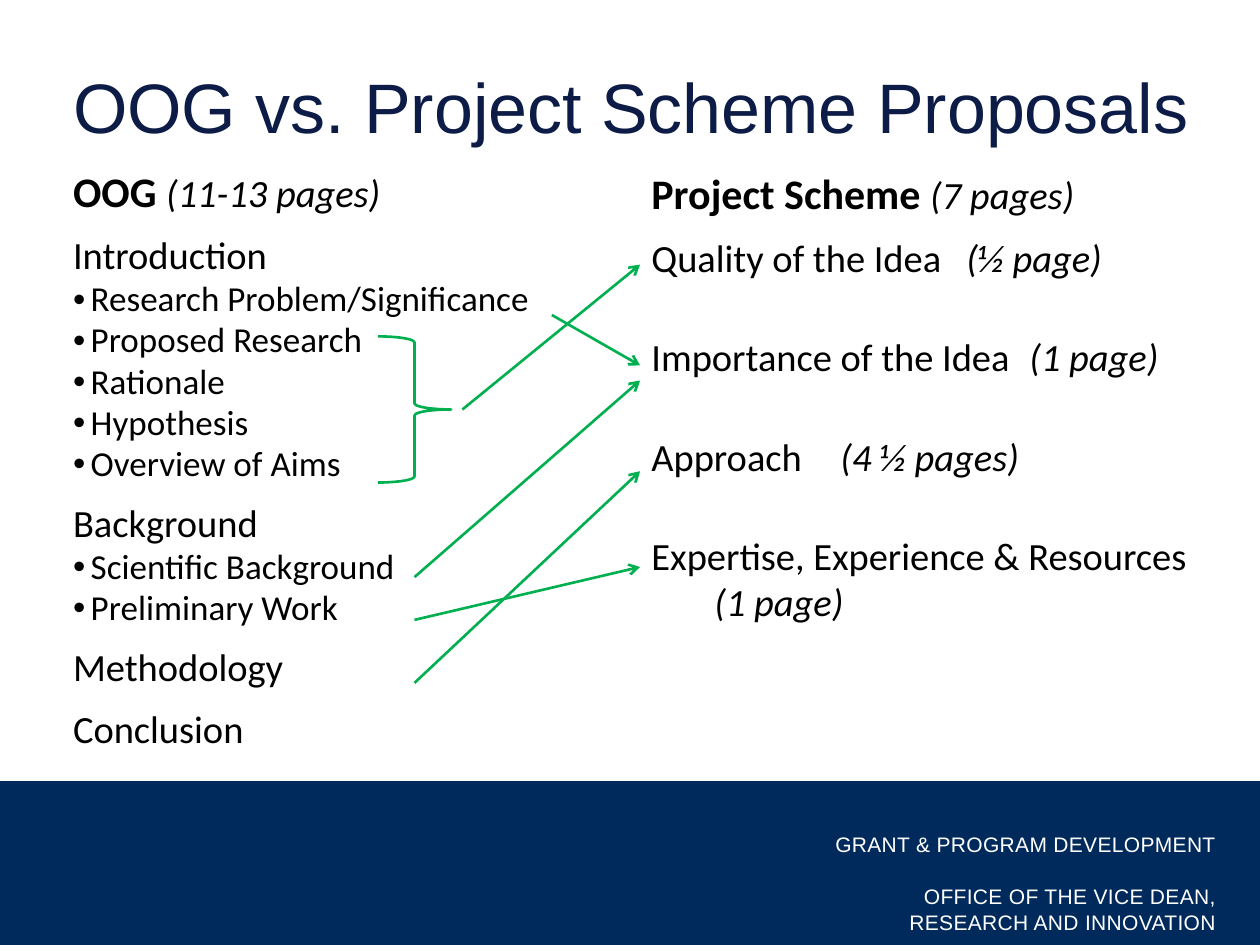
"""Build the slide that maps OOG sections to Project Scheme sections."""
from dataclasses import dataclass

import pptx
import pptx.dml.color
import pptx.enum.shapes
import pptx.enum.text
import pptx.oxml
import pptx.oxml.ns
import pptx.util
from pptx.util import Inches, Pt

COLORS = {"navy": "002A5C", "title": "0C1C47", "text": "000000",
          "white": "FFFFFF", "green": "00B050"}
FORMATS = {
    "title": {"name": "Arial", "size": Pt(40)},
    "heading": {"name": "Calibri", "size": Pt(24), "bold": True},
    "section": {"name": "Calibri", "size": Pt(22)},
    "pages": {"name": "Calibri", "size": Pt(22), "italic": True},
    "item": {"name": "Calibri", "size": Pt(20)},
    "footer": {"name": "Arial", "size": Pt(12)},
}
FRAME = {"margin_left": 0, "margin_right": 0, "margin_top": 0, "margin_bottom": 0,
         "word_wrap": True, "auto_size": pptx.enum.text.MSO_AUTO_SIZE.NONE}
ITEM_INDENT = Inches(0.14)
PAGES_TAB = Inches(3.05)
SMALL_GAP, WIDE_GAP = 9.5, 31


@dataclass
class Line:
    """A line of a column: styled pieces, gap above in points, bullet or not."""
    pieces: list[tuple[str, str]]
    gap: float = 0
    bullet: bool = False


@dataclass
class Link:
    """An arrow from an OOG part to a Project Scheme part, in inches."""
    start: tuple[float, float]
    end: tuple[float, float]


def section(name: str) -> Line:
    """Return a section line of the OOG column."""
    return Line([(name, "section")], SMALL_GAP)


def items(*names: str) -> list[Line]:
    """Return bulleted lines."""
    return [Line([(name, "item")], bullet=True) for name in names]


def criterion(name: str, pages: str, gap: float = WIDE_GAP) -> Line:
    """Return a Project Scheme line with its page count at the tab stop."""
    return Line([(f"{name}\t", "section"), (pages, "pages")], gap)


OOG = [
    Line([("OOG ", "heading"), ("(11-13 pages)", "pages")]),
    section("Introduction"),
    *items("Research Problem/Significance", "Proposed Research", "Rationale",
           "Hypothesis", "Overview of Aims"),
    section("Background"),
    *items("Scientific Background", "Preliminary Work"),
    section("Methodology"),
    section("Conclusion"),
]
PROJECT_SCHEME = [
    Line([("Project Scheme ", "heading"), ("(7 pages)", "pages")]),
    criterion("Quality of the Idea", "(½ page)", SMALL_GAP),
    criterion("Importance of the Idea", "(1 page)"),
    criterion("Approach", "(4 ½ pages)"),
    Line([("Expertise, Experience & Resources", "section")], WIDE_GAP),
    criterion("", "(1 page)", 0),
]
FOOTER = [("GRANT & PROGRAM DEVELOPMENT", 0), ("OFFICE OF THE VICE DEAN,", 15),
          ("RESEARCH AND INNOVATION", 0)]
LINKS = [
    Link((3.67, 3.25), (5.08, 2.1)),
    Link((4.38, 2.5), (5.08, 2.9)),
    Link((3.29, 4.58), (5.08, 3.02)),
    Link((3.29, 5.42), (5.08, 3.74)),
    Link((3.29, 4.92), (5.08, 4.5)),
]


def rgb(color: str) -> pptx.dml.color.RGBColor:
    """Return a named colour."""
    return pptx.dml.color.RGBColor.from_string(COLORS[color])


def apply(target, values: dict) -> None:
    """Set each attribute in values on the target."""
    for name, value in values.items():
        setattr(target, name, value)


def place(shape, left: float, top: float, width: float, height: float) -> None:
    """Move and size a shape, in inches."""
    apply(shape, {"left": Inches(left), "top": Inches(top),
                  "width": Inches(width), "height": Inches(height)})


def add_child(parent, tag: str, **attributes: str):
    """Append a drawing element with attributes and return it."""
    child = pptx.oxml.parse_xml(f"<a:{tag} {pptx.oxml.ns.nsdecls('a')}/>")
    for name, value in attributes.items():
        child.set(name, value)
    parent.append(child)
    return child


def add_text(paragraph, text: str, style: str, color: str):
    """Add a run in a named format."""
    run = paragraph.add_run()
    run.text = text
    apply(run.font, FORMATS[style])
    run.font.color.rgb = rgb(color)
    return run


def next_paragraph(frame, index: int):
    """Return the first paragraph, or a new one after it."""
    return frame.add_paragraph() if index else frame.paragraphs[0]


def fill_column(placeholder, lines: list[Line]) -> None:
    """Write the lines of a column into a body placeholder."""
    frame = placeholder.text_frame
    apply(frame, FRAME)
    for index, line in enumerate(lines):
        paragraph = next_paragraph(frame, index)
        indent = ITEM_INDENT if line.bullet else 0
        properties = paragraph._p.get_or_add_pPr()
        properties.set("marL", str(indent))
        properties.set("indent", str(-indent))
        if line.bullet:
            add_child(properties, "buChar", char="•")
        else:
            add_child(properties, "buNone")
            tabs = add_child(properties, "tabLst")
            add_child(tabs, "tab", pos=str(PAGES_TAB), algn="l")
        apply(paragraph, {"line_spacing": 0.98, "space_before": Pt(line.gap)})
        for text, style in line.pieces:
            add_text(paragraph, text, style, "text")


def add_footer(slide) -> None:
    """Draw the navy band and the office name on it."""
    band = slide.shapes.add_shape(pptx.enum.shapes.MSO_SHAPE.RECTANGLE,
                                  0, Inches(6.2), Inches(10), Inches(1.3))
    band.shadow.inherit = False
    band.fill.solid()
    band.fill.fore_color.rgb = rgb("navy")
    band.line.fill.background()
    office = slide.shapes.add_textbox(Inches(6), Inches(6.54), Inches(3.75), Inches(0.9))
    office.text_frame.word_wrap = True
    for index, (text, gap) in enumerate(FOOTER):
        paragraph = next_paragraph(office.text_frame, index)
        apply(paragraph, {"alignment": pptx.enum.text.PP_ALIGN.RIGHT,
                          "line_spacing": Pt(14.9), "space_before": Pt(gap)})
        run = add_text(paragraph, text, "footer", "white")
        run._r.get_or_add_rPr().set("spc", "20")


def style_line(line) -> None:
    """Give a line the green stroke."""
    line.color.rgb = rgb("green")
    line.width = Pt(1.5)


def add_link(slide, link: Link) -> None:
    """Draw an arrow between two parts."""
    arrow = slide.shapes.add_connector(
        pptx.enum.shapes.MSO_CONNECTOR.STRAIGHT,
        *(Inches(value) for value in link.start + link.end))
    style_line(arrow.line)
    add_child(arrow.line._get_or_add_ln(), "tailEnd", type="arrow")
    add_child(arrow._element.spPr, "effectLst")


def main() -> None:
    """Build and save the slide."""
    deck = pptx.Presentation()
    apply(deck, {"slide_width": Inches(10), "slide_height": Inches(7.5)})
    slide = deck.slides.add_slide(deck.slide_layouts[3])
    title, oog, scheme = slide.placeholders
    add_footer(slide)
    place(title, 0.58, 0.5, 9.03, 0.67)
    apply(title.text_frame, FRAME)
    title.text_frame.vertical_anchor = pptx.enum.text.MSO_ANCHOR.MIDDLE
    heading = title.text_frame.paragraphs[0]
    heading.alignment = pptx.enum.text.PP_ALIGN.LEFT
    add_text(heading, "OOG vs. Project Scheme Proposals", "title", "title")
    place(oog, 0.58, 1.33, 4.35, 4.78)
    fill_column(oog, OOG)
    place(scheme, 5.17, 1.35, 4.52, 4.07)
    fill_column(scheme, PROJECT_SCHEME)
    brace = slide.shapes.add_shape(pptx.enum.shapes.MSO_SHAPE.RIGHT_BRACE,
                                   Inches(3), Inches(2.67), Inches(0.58), Inches(1.16))
    brace.shadow.inherit = False
    brace.fill.background()
    style_line(brace.line)
    for link in LINKS:
        add_link(slide, link)
    deck.save("out.pptx")


if __name__ == "__main__":
    main()
